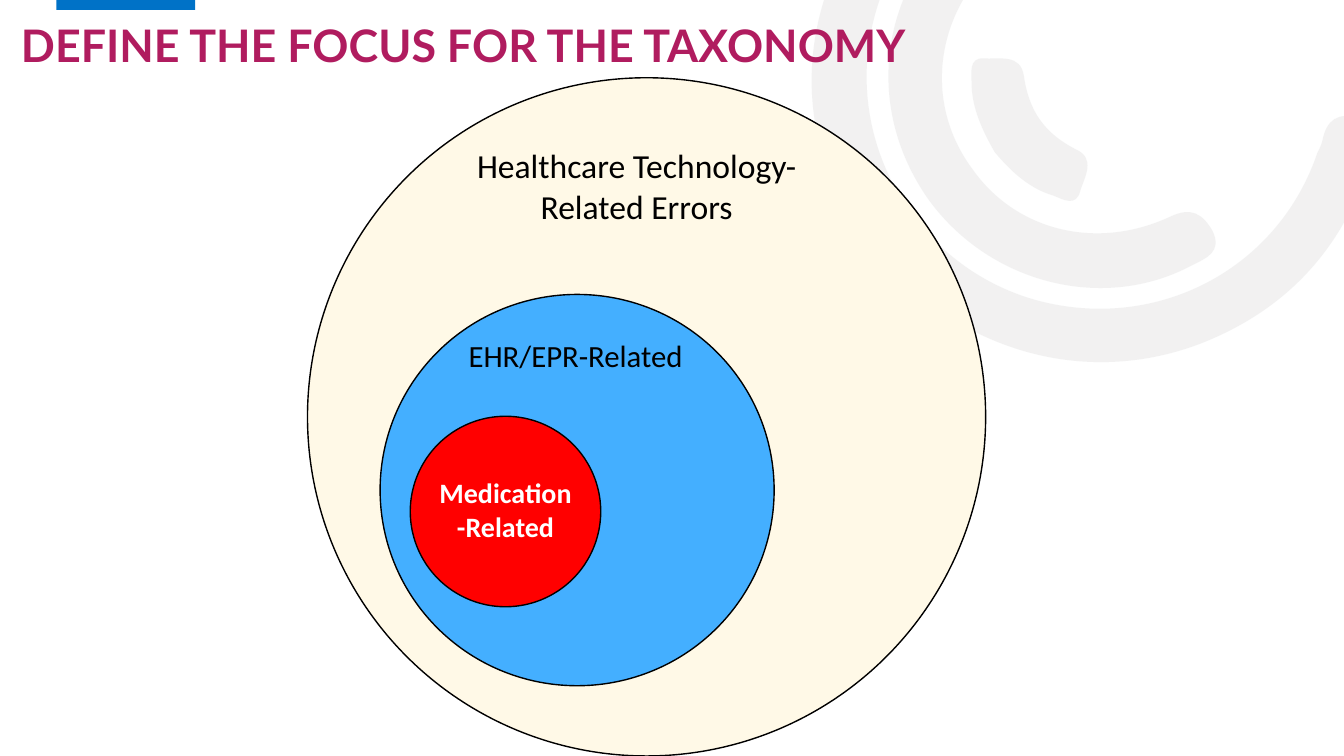
from dataclasses import dataclass

import lxml.etree
import pptx
import pptx.dml.color
import pptx.enum.shapes
import pptx.enum.text
import pptx.oxml.ns
import pptx.shapes.autoshape
import pptx.shapes.shapetree
import pptx.text.text
import pptx.util

Cm = pptx.util.Cm
RGBColor = pptx.dml.color.RGBColor
Align = pptx.enum.text.PP_ALIGN
Anchor = pptx.enum.text.MSO_ANCHOR
Preset = pptx.enum.shapes.MSO_SHAPE
qn = pptx.oxml.ns.qn

BLACK = RGBColor(0x00, 0x00, 0x00)
WHITE = RGBColor(0xFF, 0xFF, 0xFF)
CREAM = RGBColor(0xFF, 0xF9, 0xE7)
SKY = RGBColor(0x44, 0xAF, 0xFF)
RED = RGBColor(0xFF, 0x00, 0x00)
BLUE = RGBColor(0x00, 0x72, 0xC7)
MAGENTA = RGBColor(0xB0, 0x1C, 0x5F)
GREY = RGBColor(0xE7, 0xE6, 0xE6)
SWIRL_OPACITY = 53
CM_PER_INCH = 2.54


@dataclass(frozen=True)
class Box:
    """Left, top, width and height in centimetres."""
    left: float
    top: float
    width: float
    height: float

    def lengths(self) -> list[pptx.util.Length]:
        return [Cm(v) for v in (self.left, self.top, self.width, self.height)]


@dataclass(frozen=True)
class Label:
    lines: tuple[str, ...]
    size: int
    color: RGBColor = BLACK
    font: str = "Calibri"
    bold: bool = False
    align: Align = Align.CENTER
    anchor: Anchor = Anchor.TOP
    line_spacing: float = 1.0
    insets: tuple[float, float, float, float] = (0.25, 0.13, 0.25, 0.13)


@dataclass(frozen=True)
class Scope:
    """A circle of the diagram with its label; no label box means inside the circle."""
    circle: Box
    fill: RGBColor
    label: Label
    label_box: Box | None = None


# Control points in inches: a start, then three points per Bezier curve
SWIRLS = [
    [(8.51, 2.29),
     (7.99, 1.49), (7.87, 0.5), (8.38, -0.5),
     (8.9, -1.52), (9.76, -2.03), (10.9, -2.07),
     (11.05, -2.07), (11.21, -2.1), (11.31, -1.95),
     (11.44, -1.75), (11.27, -1.54), (10.98, -1.54),
     (9.67, -1.54), (8.65, -0.59), (8.6, 0.68),
     (8.56, 1.81), (9.36, 2.81), (10.46, 3.02),
     (11.6, 3.24), (12.7, 2.61), (13.07, 1.52),
     (13.09, 1.48), (13.11, 1.44), (13.12, 1.4),
     (13.16, 1.19), (13.27, 1.11), (13.49, 1.17),
     (13.73, 1.24), (13.67, 1.41), (13.61, 1.56),
     (13.34, 2.45), (12.78, 3.07), (11.91, 3.41),
     (10.7, 3.87), (9.36, 3.45), (8.51, 2.29)],
    [(9.22, 1.99),
     (8.62, 1.15), (8.69, 0.07), (9.4, -0.68),
     (9.51, -0.79), (9.62, -0.95), (9.8, -0.78),
     (9.95, -0.64), (9.97, -0.5), (9.79, -0.32),
     (9.25, 0.26), (9.2, 1.08), (9.65, 1.68),
     (10.08, 2.29), (10.88, 2.49), (11.61, 2.15),
     (11.82, 2.05), (11.93, 2.12), (12.03, 2.29),
     (12.13, 2.5), (11.97, 2.56), (11.83, 2.63),
     (10.96, 3.1), (9.83, 2.82), (9.22, 1.99)],
    [(9.87, 1.51),
     (9.75, 1.3), (9.64, 1.07), (9.64, 0.82),
     (9.64, 0.73), (9.61, 0.57), (9.76, 0.58),
     (9.92, 0.59), (10.13, 0.53), (10.16, 0.76),
     (10.21, 1.1), (10.36, 1.32), (10.67, 1.48),
     (10.88, 1.57), (10.76, 1.76), (10.72, 1.89),
     (10.68, 2.06), (10.55, 1.98), (10.45, 1.94),
     (10.21, 1.87), (10.03, 1.7), (9.87, 1.51)],
]

ACCENT_BAR = Box(1.42, -0.05, 3.5, 0.3)

SCOPES = [
    Scope(Box(7.75, 1.96, 17.09, 17.09), CREAM,
          Label(("Healthcare Technology-", "Related Errors"), 24),
          Box(8.97, 3.53, 14.15, 2.31)),
    Scope(Box(9.58, 7.42, 9.93, 9.86), SKY,
          Label(("EHR/EPR-Related",), 22, align=Align.LEFT),
          Box(11.56, 8.36, 6.65, 1.19)),
    Scope(Box(10.34, 10.49, 4.8, 4.8), RED,
          Label(("Medication -Related",), 20, WHITE, bold=True,
                anchor=Anchor.MIDDLE, insets=(0, 0, 0, 0.1))),
]

TITLE_BOX = Box(0.53, -0.3, 29.21, 2.13)
TITLE = Label(("DEFINE THE FOCUS FOR THE TAXONOMY",), 32, MAGENTA, "Lato", True,
              Align.LEFT, Anchor.BOTTOM, 0.9, (0, 0, 0, 0))


def paint(shape: pptx.shapes.autoshape.Shape, fill: RGBColor,
          outline: RGBColor | None = None) -> None:
    shape.shadow.inherit = False
    shape.fill.solid()
    shape.fill.fore_color.rgb = fill
    if outline is None:
        shape.line.fill.background()
    else:
        shape.line.color.rgb = outline
        shape.line.width = pptx.util.Pt(1)


def write(frame: pptx.text.text.TextFrame, label: Label) -> None:
    frame.word_wrap = True
    frame.vertical_anchor = label.anchor
    (frame.margin_left, frame.margin_top,
     frame.margin_right, frame.margin_bottom) = map(Cm, label.insets)
    frame.text = "\n".join(label.lines)
    for paragraph in frame.paragraphs:
        paragraph.alignment = label.align
        paragraph.line_spacing = label.line_spacing
        paragraph.font.name = label.font
        paragraph.font.size = pptx.util.Pt(label.size)
        paragraph.font.bold = label.bold
        paragraph.font.color.rgb = label.color


def add_label(shapes: pptx.shapes.shapetree.SlideShapes, box: Box, label: Label) -> None:
    write(shapes.add_textbox(*box.lengths()).text_frame, label)


def add_swirl(shapes: pptx.shapes.shapetree.SlideShapes,
              points: list[tuple[float, float]]) -> None:
    start, *rest = [(Cm(x * CM_PER_INCH), Cm(y * CM_PER_INCH)) for x, y in points]
    builder = shapes.build_freeform(*start)
    builder.add_line_segments(rest, close=True)
    swirl = builder.convert_to_shape()
    paint(swirl, GREY)
    # Merge every three segments into one Bezier curve
    segments = list(swirl.element.iter(qn("a:lnTo")))
    for i in range(0, len(segments) - 2, 3):
        curve = lxml.etree.Element(qn("a:cubicBezTo"))
        segments[i].addprevious(curve)
        for segment in segments[i:i + 3]:
            curve.append(segment[0])
            segment.getparent().remove(segment)
    color = next(swirl.element.spPr.iter(qn("a:srgbClr")))
    lxml.etree.SubElement(color, qn("a:alpha"), val=str(SWIRL_OPACITY * 1000))


def add_scope(shapes: pptx.shapes.shapetree.SlideShapes, scope: Scope) -> None:
    circle = shapes.add_shape(Preset.OVAL, *scope.circle.lengths())
    paint(circle, scope.fill, BLACK)
    if scope.label_box is None:
        write(circle.text_frame, scope.label)
    else:
        add_label(shapes, scope.label_box, scope.label)


def main() -> None:
    deck = pptx.Presentation()
    deck.slide_width, deck.slide_height = Cm(33.87), Cm(19.05)
    shapes = deck.slides.add_slide(deck.slide_layouts[6]).shapes

    # Background decoration
    for points in SWIRLS:
        add_swirl(shapes, points)
    paint(shapes.add_shape(Preset.RECTANGLE, *ACCENT_BAR.lengths()), BLUE)

    # Nested scopes, outermost first
    for scope in SCOPES:
        add_scope(shapes, scope)

    # Title
    add_label(shapes, TITLE_BOX, TITLE)
    deck.save("out.pptx")


if __name__ == "__main__":
    main()
